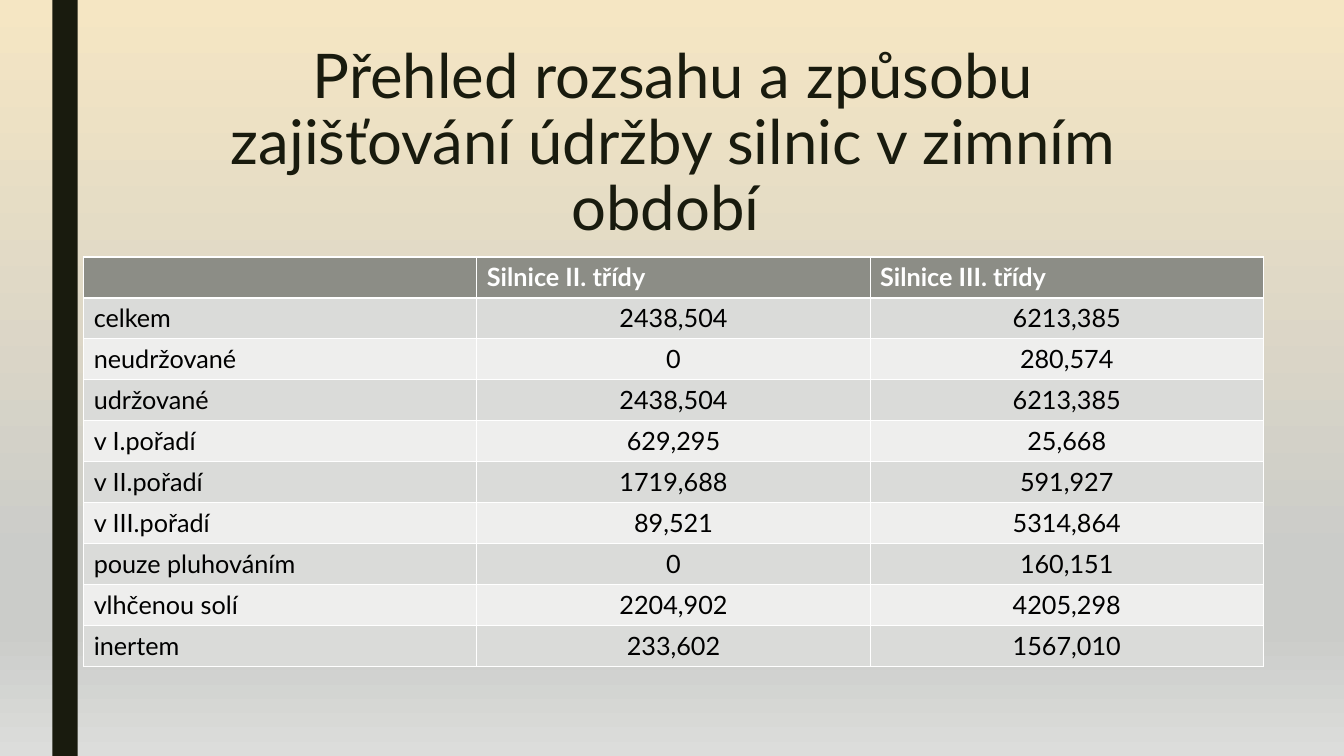
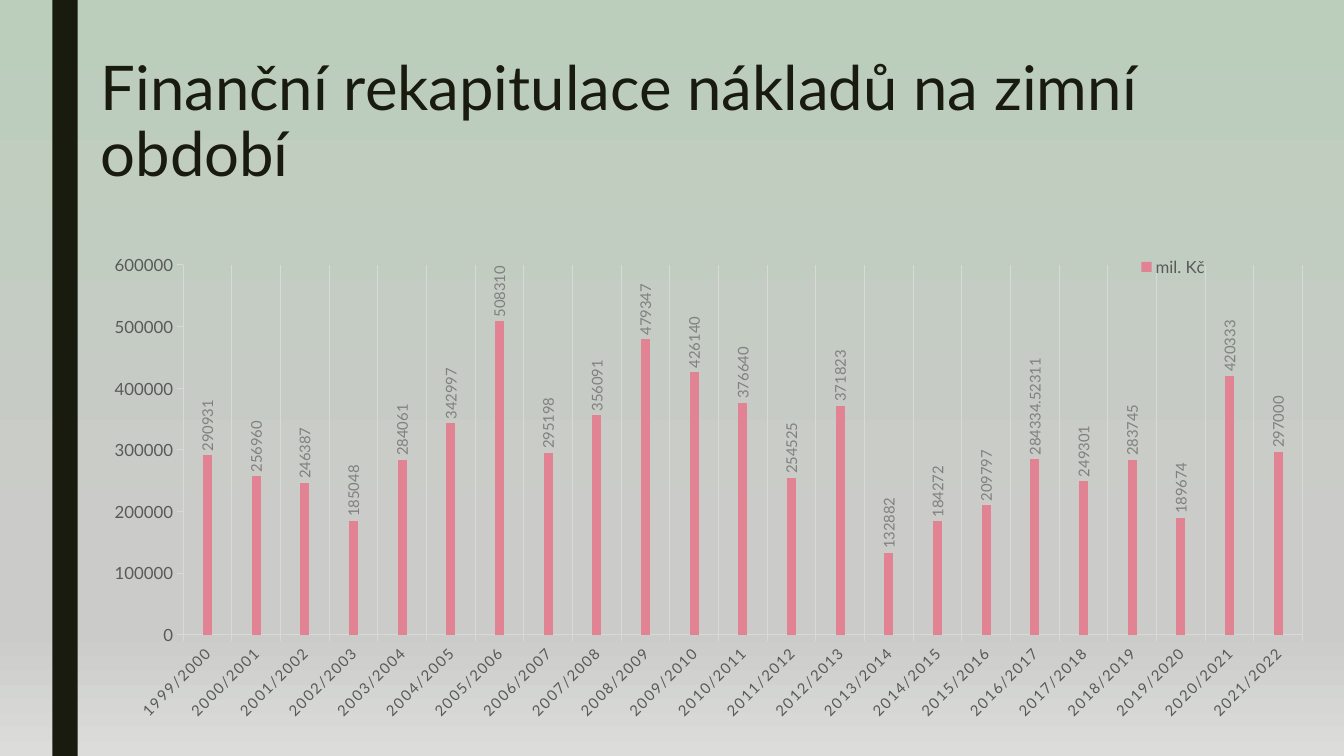
from lxml import etree
from pptx import Presentation
from pptx import util as u
from pptx.chart.data import CategoryChartData
from pptx.dml.color import RGBColor
from pptx.enum import chart as ch, shapes, text
from pptx.oxml.ns import qn

INK = RGBColor(0x19, 0x1B, 0x0E)
WHITE = RGBColor(0xFF, 0xFF, 0xFF)
BLACK = RGBColor(0, 0, 0)
HEADER = RGBColor(0x8C, 0x8D, 0x86)
BANDS = (RGBColor(0xDA, 0xDB, 0xD9), RGBColor(0xEE, 0xEE, 0xED))
SAND = RGBColor(0xF5, 0xE6, 0xC3)
SAGE = RGBColor(0xBB, 0xCD, 0xBB)
STONE = RGBColor(0xCB, 0xCC, 0xC9)
MIST = RGBColor(0xDC, 0xDD, 0xDB)
PINK = RGBColor(0xE2, 0x83, 0x94)
GRID = RGBColor(0xD9, 0xD9, 0xD9)
AXIS_TEXT = RGBColor(0x59, 0x59, 0x59)
LABEL_TEXT = RGBColor(0x80, 0x80, 0x80)

ROADS = [
    ("", "Silnice II. třídy", "Silnice III. třídy"),
    ("celkem", "2438,504", "6213,385"),
    ("neudržované", "0", "280,574"),
    ("udržované", "2438,504", "6213,385"),
    ("v I.pořadí", "629,295", "25,668"),
    ("v II.pořadí", "1719,688", "591,927"),
    ("v III.pořadí", "89,521", "5314,864"),
    ("pouze pluhováním", "0", "160,151"),
    ("vlhčenou solí", "2204,902", "4205,298"),
    ("inertem", "233,602", "1567,010"),
]
COSTS = [290931, 256960, 246387, 185048, 284061, 342997, 508310, 295198,
         356091, 479347, 426140, 376640, 254525, 371823, 132882, 184272,
         209797, 284334.52311, 249301, 283745, 189674, 420333, 297000]
SEASONS = [f"{y}/{y + 1}" for y in range(1999, 1999 + len(COSTS))]


class Deck:
    FONT = "Lato"

    def __init__(self):
        self.prs = Presentation()
        self.prs.slide_width = u.Inches(13.33)
        self.prs.slide_height = u.Inches(7.5)
        self.s = None

    def style(self, font, size, color, bold=False):
        font.name = self.FONT
        font.size = u.Pt(size)
        font.color.rgb = color
        font.bold = bold

    def slide(self, top_color):
        self.s = self.prs.slides.add_slide(self.prs.slide_layouts[6])
        fill = self.s.background.fill
        fill.gradient()
        fill.gradient_angle = 270
        stops = self.s.element.find(".//" + qn("a:gsLst"))
        for gs in list(stops):
            stops.remove(gs)
        for pos, color in ((0, top_color), (74, STONE), (83, STONE), (100, MIST)):
            gs = etree.SubElement(stops, qn("a:gs"), pos=str(pos * 1000))
            etree.SubElement(gs, qn("a:srgbClr"), val=str(color))
        self.bar()

    def bar(self):
        sp = self.s.shapes.add_shape(shapes.MSO_SHAPE.RECTANGLE, u.Inches(0.52), 0,
                                     u.Inches(0.25), self.prs.slide_height)
        sp.shadow.inherit = False
        sp.fill.solid()
        sp.fill.fore_color.rgb = INK
        sp.line.fill.background()

    def title(self, words, x, y, w, h, align=text.PP_ALIGN.LEFT):
        tf = self.s.shapes.add_textbox(*map(u.Inches, (x, y, w, h))).text_frame
        tf.word_wrap = True
        p = tf.paragraphs[0]
        p.alignment = align
        p.line_spacing = 0.89
        r = p.add_run()
        r.text = words
        self.style(r.font, 44, INK)

    def table(self, rows, x, y, w, h):
        tbl = self.s.shapes.add_table(len(rows), len(rows[0]),
                                      *map(u.Inches, (x, y, w, h))).table
        for i, row in enumerate(rows):
            for j, words in enumerate(row):
                cell = tbl.cell(i, j)
                cell.fill.solid()
                cell.fill.fore_color.rgb = BANDS[(i - 1) % 2] if i else HEADER
                if not words:
                    continue
                p = cell.text_frame.paragraphs[0]
                if i and j:
                    p.alignment = text.PP_ALIGN.CENTER
                r = p.add_run()
                r.text = words
                self.style(r.font, 18, BLACK if i else WHITE, bold=not i)

    def layout(self, parent, index, inner=False, **box):
        old = parent.find(qn("c:layout"))
        if old is not None:
            parent.remove(old)
        layout = etree.Element(qn("c:layout"))
        parent.insert(index, layout)
        manual = etree.SubElement(layout, qn("c:manualLayout"))
        if inner:
            etree.SubElement(manual, qn("c:layoutTarget"), val="inner")
        for mode in ("xMode", "yMode"):
            etree.SubElement(manual, qn("c:" + mode), val="edge")
        for key, value in box.items():
            etree.SubElement(manual, qn("c:" + key), val=str(value))

    def rotate(self, chart, owner, degrees):
        body = chart.element.xpath(f".//c:{owner}/c:txPr/a:bodyPr")[0]
        body.set("rot", str(degrees * 60000))
        body.set("vert", "horz")

    def line(self, fmt):
        fmt.line.color.rgb = GRID
        fmt.line.width = u.Pt(0.75)

    def column_chart(self, name, cats, vals, x, y, w, h):
        data = CategoryChartData()
        data.categories = cats
        data.add_series(name, vals)
        chart = self.s.shapes.add_chart(ch.XL_CHART_TYPE.COLUMN_CLUSTERED,
                                        *map(u.Inches, (x, y, w, h)), data).chart
        self.style(chart.font, 10, BLACK)
        chart.has_title = False
        for axis, size in ((chart.category_axis, 10.6), (chart.value_axis, 12)):
            self.style(axis.tick_labels.font, size, AXIS_TEXT)
            self.line(axis.format)
            axis.major_tick_mark = ch.XL_TICK_MARK.OUTSIDE
        chart.value_axis.has_major_gridlines = False
        chart.value_axis.minimum_scale = 0
        chart.value_axis.maximum_scale = 600000
        chart.value_axis.major_unit = 100000
        chart.category_axis.has_major_gridlines = True
        self.line(chart.category_axis.major_gridlines.format)

        plot = chart.plots[0]
        plot.gap_width = 444
        plot.overlap = 63
        plot.vary_by_categories = False
        series = plot.series[0]
        series.format.fill.solid()
        series.format.fill.fore_color.rgb = PINK
        labels = series.data_labels
        labels.show_value = True
        labels.position = ch.XL_LABEL_POSITION.OUTSIDE_END
        self.style(labels.font, 10.6, LABEL_TEXT)

        chart.has_legend = True
        chart.legend.position = ch.XL_LEGEND_POSITION.TOP
        chart.legend.include_in_layout = False
        self.style(chart.legend.font, 12, AXIS_TEXT)

        self.rotate(chart, "catAx", -45)
        self.rotate(chart, "dLbls", -90)
        chart.element.xpath(".//c:catAx/c:txPr//a:defRPr")[0].set("spc", "120")
        self.layout(chart.element.find(".//" + qn("c:plotArea")), 0, inner=True,
                    x=0.0746, y=0.1064, w=0.905, h=0.711)
        self.layout(chart.element.find(".//" + qn("c:legend")), 1,
                    x=0.84, y=0.08, w=0.07, h=0.06)


def main():
    d = Deck()
    d.slide(SAND)
    d.title("Přehled rozsahu a způsobu zajišťování údržby silnic v zimním období ",
            1.56, 0.41, 10.24, 1.6, text.PP_ALIGN.CENTER)
    d.table(ROADS, 0.83, 2.55, 11.7, 4.06)

    d.slide(SAGE)
    d.title("Finanční rekapitulace nákladů na zimní období", 0.9, 0.53, 12.27, 1.55)
    d.column_chart("mil. Kč", SEASONS, COSTS, 0.9, 2.08, 12.27, 5.16)
    d.prs.save("out.pptx")


if __name__ == "__main__":
    main()
